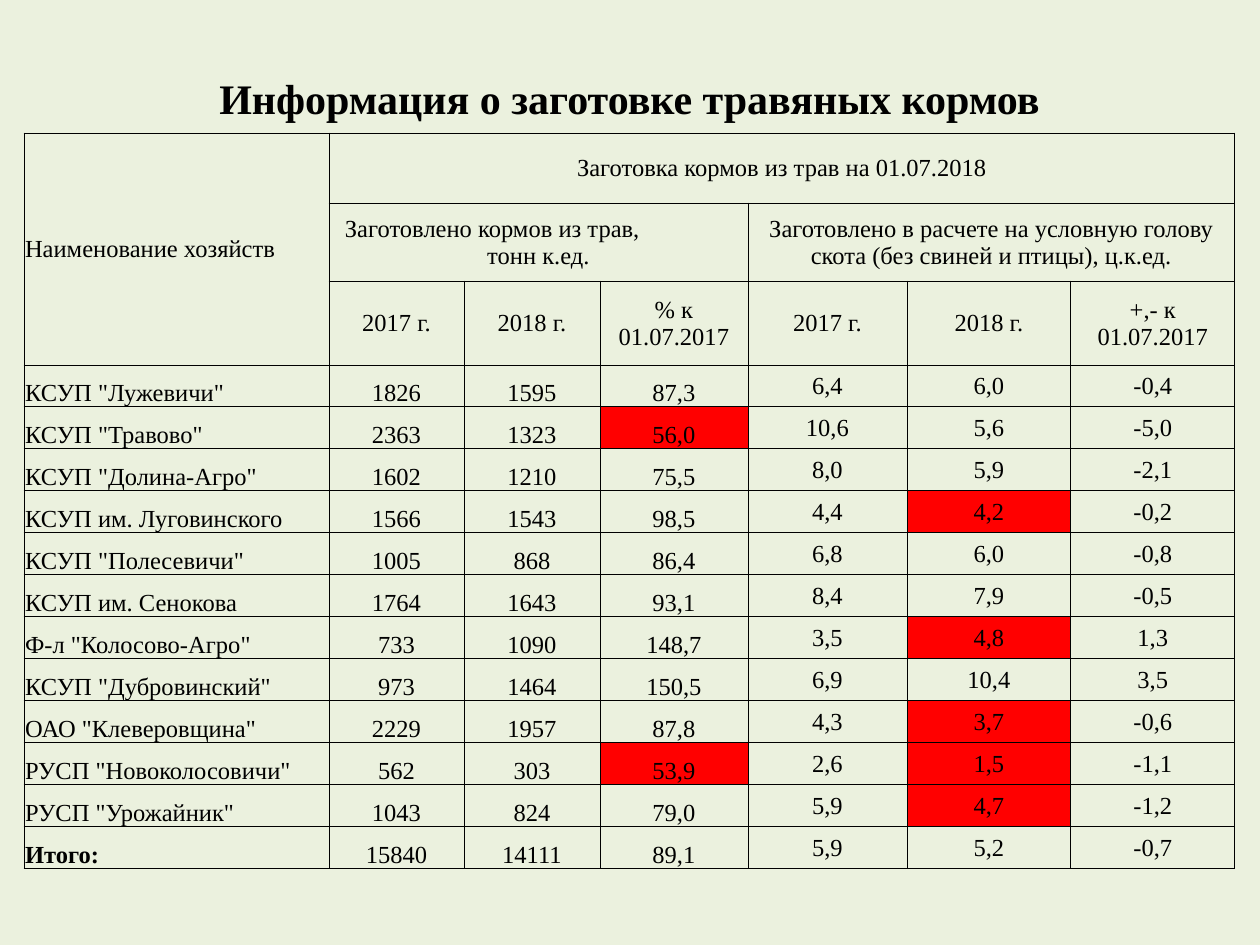
from lxml.etree import SubElement
from pptx import Presentation
from pptx.dml.color import RGBColor
from pptx.enum.text import MSO_ANCHOR, PP_ALIGN
from pptx.oxml.ns import qn
from pptx.util import Pt

PX = 914400 // 126
FONT = "Times New Roman"
BLACK, RED, BACKGROUND = "000000", "FF0000", "EBF1DE"

COLUMN_WIDTHS = [305, 135, 136, 148, 159, 164, 164]
HEADER_HEIGHTS = [67, 70, 78, 84]
ROW_HEIGHT = 42
FIRST_FARM_ROW = len(HEADER_HEIGHTS)

# (row, column, text, rows spanned, columns spanned)
HEADERS = [
    (0, 0, "Информация о заготовке травяных кормов", 1, 7),
    (1, 0, "Наименование хозяйств", 3, 1),
    (1, 1, "Заготовка кормов из трав на 01.07.2018", 1, 6),
    (2, 1, "Заготовлено кормов из трав,\nтонн к.ед.", 1, 3),
    (2, 4, "Заготовлено в расчете на условную голову скота "
           "(без свиней и птицы), ц.к.ед.", 1, 3),
]
YEAR_HEADERS = ["2017 г.", "2018 г.", "% к 01.07.2017",
                "2017 г.", "2018 г.", "+,- к 01.07.2017"]

FARMS = [
    ('КСУП "Лужевичи"', "1826", "1595", "87,3", "6,4", "6,0", "-0,4"),
    ('КСУП "Травово"', "2363", "1323", "56,0", "10,6", "5,6", "-5,0"),
    ('КСУП "Долина-Агро"', "1602", "1210", "75,5", "8,0", "5,9", "-2,1"),
    ("КСУП им. Луговинского", "1566", "1543", "98,5", "4,4", "4,2", "-0,2"),
    ('КСУП "Полесевичи"', "1005", "868", "86,4", "6,8", "6,0", "-0,8"),
    ("КСУП им. Сенокова", "1764", "1643", "93,1", "8,4", "7,9", "-0,5"),
    ('Ф-л "Колосово-Агро"', "733", "1090", "148,7", "3,5", "4,8", "1,3"),
    ('КСУП "Дубровинский"', "973", "1464", "150,5", "6,9", "10,4", "3,5"),
    ('ОАО "Клеверовщина"', "2229", "1957", "87,8", "4,3", "3,7", "-0,6"),
    ('РУСП "Новоколосовичи"', "562", "303", "53,9", "2,6", "1,5", "-1,1"),
    ('РУСП "Урожайник"', "1043", "824", "79,0", "5,9", "4,7", "-1,2"),
    ("Итого:", "15840", "14111", "89,1", "5,9", "5,2", "-0,7"),
]
# Farm row and column of the weak results
WEAK_RESULTS = {(1, 3), (3, 5), (6, 5), (8, 5), (9, 3), (9, 5), (10, 5)}


def rgb(color):
    return RGBColor.from_string(color)


def set_borders(cell, visible):
    properties = cell._tc.get_or_add_tcPr()
    for side in "LRTB":
        line = SubElement(properties, qn(f"a:ln{side}"), w=str(Pt(0.5)))
        if side in visible:
            fill = SubElement(line, qn("a:solidFill"))
            SubElement(fill, qn("a:srgbClr"), val=BLACK)
        else:
            SubElement(line, qn("a:noFill"))


def write_cell(cell, text, align=PP_ALIGN.CENTER, anchor=MSO_ANCHOR.MIDDLE,
               size=14, bold=False):
    cell.text_frame.text = text
    cell.vertical_anchor = anchor
    for para in cell.text_frame.paragraphs:
        para.alignment = align
        for span in para.runs:
            span.font.name = FONT
            span.font.size = Pt(size)
            span.font.bold = bold
            span.font.color.rgb = rgb(BLACK)


def add_plain_table(slide):
    heights = HEADER_HEIGHTS + [ROW_HEIGHT] * len(FARMS)
    frame = slide.shapes.add_table(
        len(heights), len(COLUMN_WIDTHS), 24 * PX, 66 * PX,
        sum(COLUMN_WIDTHS) * PX, sum(heights) * PX)
    table = frame.table
    table.first_row = table.horz_banding = False
    for column, width in zip(table.columns, COLUMN_WIDTHS):
        column.width = width * PX
    for index, (row, height) in enumerate(zip(table.rows, heights)):
        row.height = height * PX
        for cell in row.cells:
            cell.margin_left = cell.margin_right = cell.margin_top = PX
            cell.margin_bottom = 0
            set_borders(cell, "LRTB" if index else "B")
            cell.fill.background()
    return table


def fill_headers(table):
    for row, column, text, height, width in HEADERS:
        cell = table.cell(row, column)
        cell.merge(table.cell(row + height - 1, column + width - 1))
        title = row == 0
        align = PP_ALIGN.LEFT if height > 1 else PP_ALIGN.CENTER
        write_cell(cell, text, align, size=24 if title else 14, bold=title)
    for column, text in enumerate(YEAR_HEADERS, start=1):
        write_cell(table.cell(3, column), text)

    # The first line of the fodder heading starts near the left border
    first_line = table.cell(2, 1).text_frame.paragraphs[0]
    first_line.alignment = PP_ALIGN.LEFT
    first_line._p.get_or_add_pPr().set("marL", str(15 * PX))


def fill_farms(table):
    for row, values in enumerate(FARMS):
        for column, text in enumerate(values):
            cell = table.cell(FIRST_FARM_ROW + row, column)
            write_cell(
                cell, text,
                align=PP_ALIGN.CENTER if column else PP_ALIGN.LEFT,
                anchor=MSO_ANCHOR.BOTTOM if column < 4 else MSO_ANCHOR.MIDDLE,
                bold=text == "Итого:")
            if (row, column) in WEAK_RESULTS:
                cell.fill.solid()
                cell.fill.fore_color.rgb = rgb(RED)


def main():
    deck = Presentation()
    deck.slide_width, deck.slide_height = 1260 * PX, 945 * PX
    slide = deck.slides.add_slide(deck.slide_layouts[6])
    slide.background.fill.solid()
    slide.background.fill.fore_color.rgb = rgb(BACKGROUND)
    table = add_plain_table(slide)
    fill_headers(table)
    fill_farms(table)
    deck.save("out.pptx")


if __name__ == "__main__":
    main()
